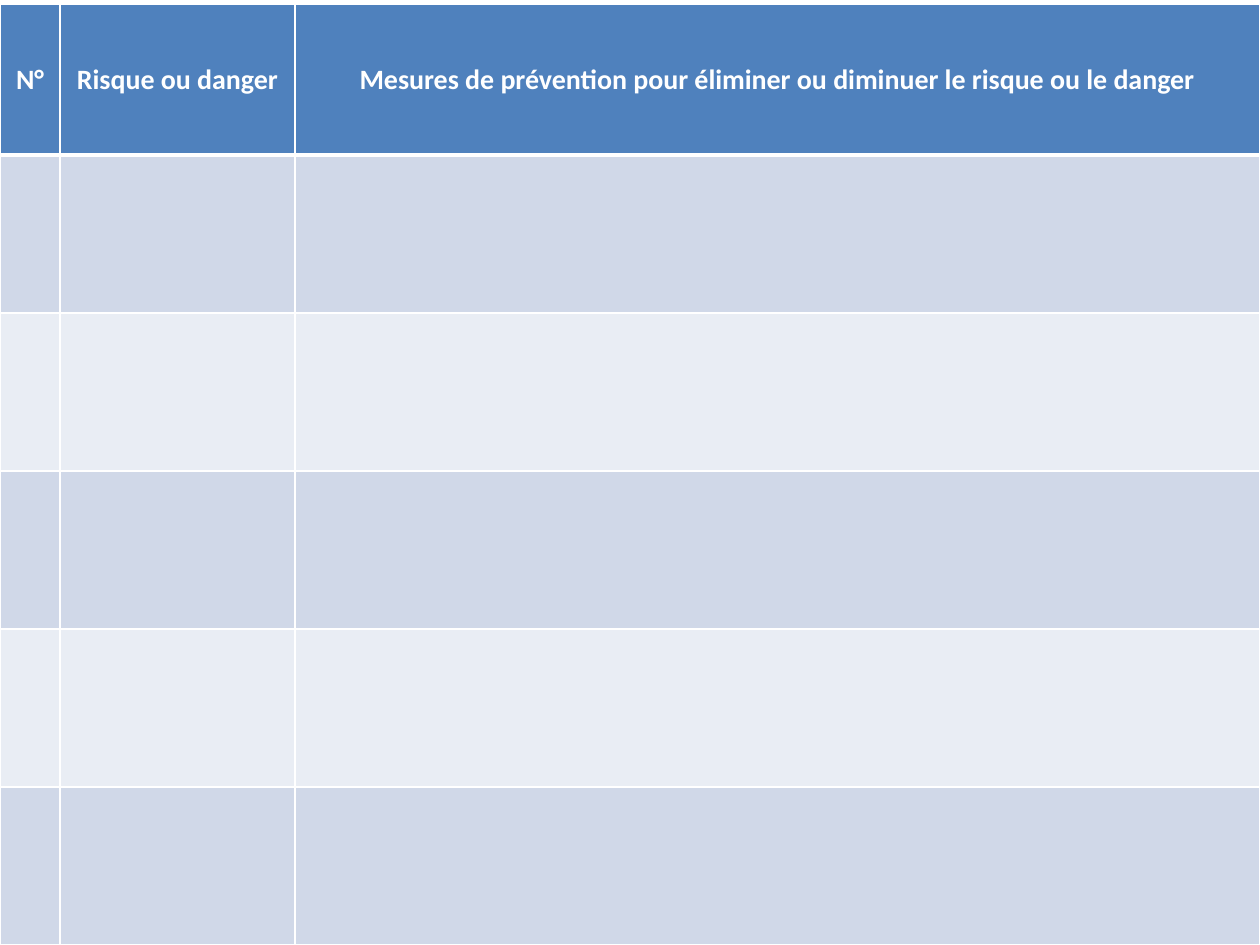
from lxml.etree import SubElement
from pptx import Presentation
from pptx.dml.color import RGBColor
from pptx.enum.text import MSO_ANCHOR as Anchor, PP_ALIGN as Align
from pptx.oxml.ns import qn
from pptx.util import Pt

EMU_PER_PX = 914400 / 126
SLIDE_W, SLIDE_H = 1260, 945

WHITE = RGBColor(0xFF, 0xFF, 0xFF)
HEADER_BLUE = RGBColor(0x4F, 0x81, 0xBD)
BAND_DARK = RGBColor(0xD0, 0xD8, 0xE8)
BAND_LIGHT = RGBColor(0xE9, 0xED, 0xF4)

HEADINGS = [
    "N°",
    "Risque ou danger",
    "Mesures de prévention pour éliminer ou diminuer le risque ou le danger",
]
NUMBER_W, RISK_W = 60, 235
HEADER_H = 151
RISK_ROWS = 5


def px(length):
    return round(length * EMU_PER_PX)


def write(cell, text, *, size=16, color=WHITE, bold=True, font="Calibri"):
    cell.vertical_anchor = Anchor.MIDDLE
    paragraph = cell.text_frame.paragraphs[0]
    paragraph.alignment = Align.CENTER
    run = paragraph.add_run()
    run.text = text
    run.font.name = font
    run.font.size = Pt(size)
    run.font.bold = bold
    run.font.color.rgb = color


def paint(cell, fill, *, top=1, bottom=1):
    """Give a cell white borders, with widths in points, and a fill."""
    properties = cell._tc.get_or_add_tcPr()
    for side, width in (("L", 1), ("R", 1), ("T", top), ("B", bottom)):
        line = SubElement(properties, qn(f"a:ln{side}"), w=str(Pt(width)))
        solid = SubElement(line, qn("a:solidFill"))
        SubElement(solid, qn("a:srgbClr"), val=str(WHITE))
    cell.fill.solid()
    cell.fill.fore_color.rgb = fill


def add_risk_table(slide, left, top, width, height):
    frame = slide.shapes.add_table(
        RISK_ROWS + 1, len(HEADINGS), px(left), px(top), px(width), px(height)
    )
    table = frame.table
    column_widths = (NUMBER_W, RISK_W, width - NUMBER_W - RISK_W)
    for column, column_width in zip(table.columns, column_widths):
        column.width = px(column_width)

    header, *risks = table.rows
    header.height = px(HEADER_H)
    for cell, heading in zip(header.cells, HEADINGS):
        paint(cell, HEADER_BLUE, bottom=3)
        write(cell, heading)

    for index, risk in enumerate(risks):
        risk.height = px((height - HEADER_H) // RISK_ROWS)
        for cell in risk.cells:
            paint(
                cell,
                BAND_LIGHT if index % 2 else BAND_DARK,
                top=1 if index else 3,
            )


def main():
    deck = Presentation()
    deck.slide_width, deck.slide_height = px(SLIDE_W), px(SLIDE_H)
    slide = deck.slides.add_slide(deck.slide_layouts[6])
    table_top = 4
    add_risk_table(slide, 0, table_top, SLIDE_W, SLIDE_H - table_top)
    deck.save("out.pptx")


if __name__ == "__main__":
    main()
